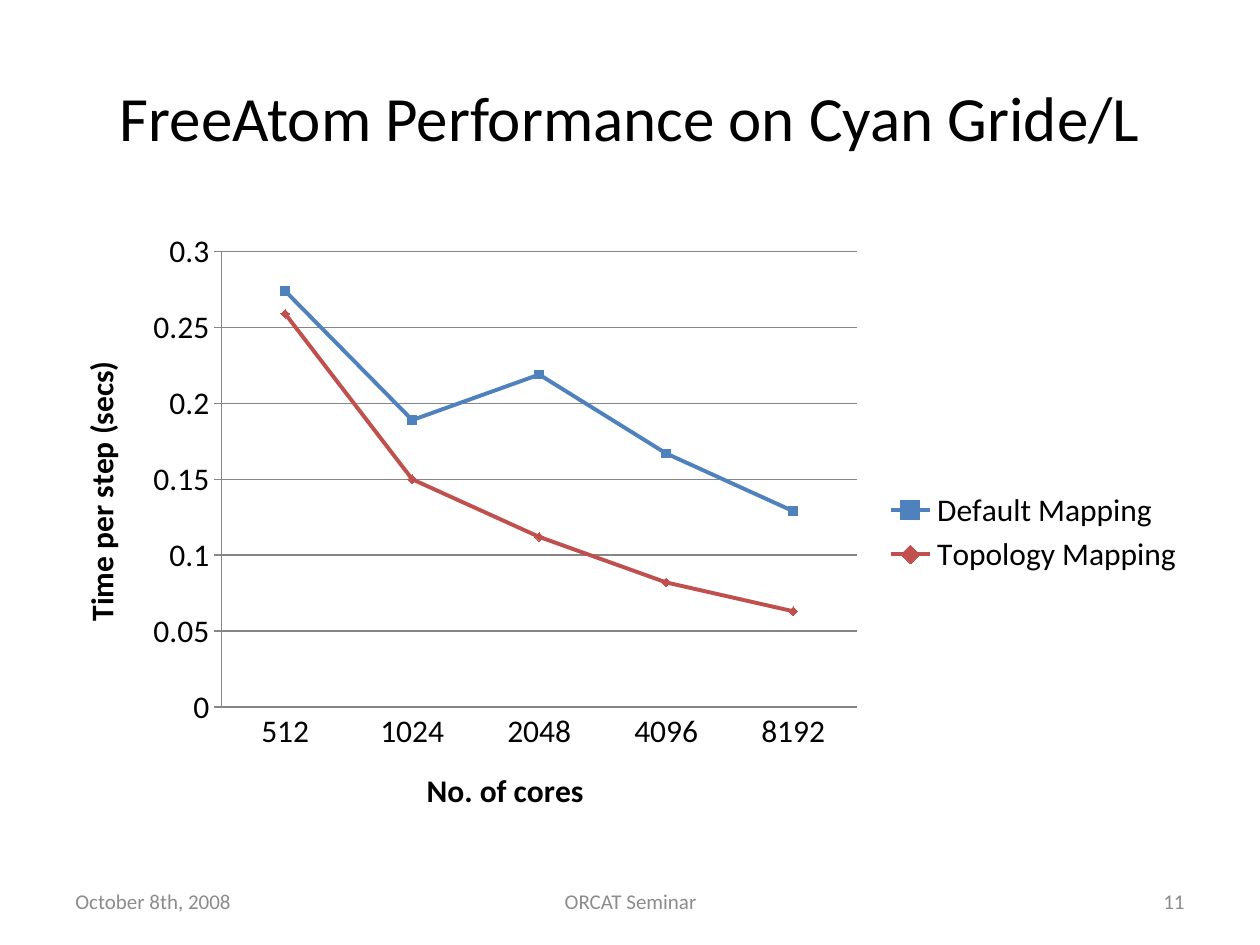
import dataclasses

import lxml.etree
import pptx
import pptx.chart.data
import pptx.dml.color
import pptx.enum.chart
import pptx.enum.text
import pptx.oxml.ns
import pptx.util

Inches = pptx.util.Inches
Pt = pptx.util.Pt
Align = pptx.enum.text.PP_ALIGN
Chart = pptx.enum.chart


@dataclasses.dataclass(frozen=True)
class Theme:
    face: str = "Calibri"
    ink: str = "000000"
    faint: str = "8C8C8C"
    grid: str = "868686"
    blue: str = "4F81BD"
    red: str = "C0504D"
    head: float = 36
    body: float = 18
    foot: float = 12
    hair: float = 0.75
    line: float = 2.25
    mark: int = 5


THEME = Theme()


def tint(code):
    return pptx.dml.color.RGBColor.from_string(code)


def apply(item, form):
    for name, value in form.items():
        setattr(item, name, value)


def style(font, size, color, bold=False):
    apply(font, {"name": THEME.face, "size": Pt(size), "bold": bold})
    font.color.rgb = tint(color)


def paint(line, color, width):
    line.color.rgb = tint(color)
    line.width = Pt(width)


def add_text(slide, box, text, size, color, align):
    frame = slide.shapes.add_textbox(*map(Inches, box)).text_frame
    apply(frame, {"word_wrap": True, "vertical_anchor": pptx.enum.text.MSO_ANCHOR.MIDDLE})
    par = frame.paragraphs[0]
    par.alignment = align
    run = par.add_run()
    run.text = text
    style(run.font, size, color)


def set_axis(axis, title, form):
    apply(axis, form)
    paint(axis.format.line, THEME.grid, THEME.hair)
    style(axis.tick_labels.font, THEME.body, THEME.ink)
    run = axis.axis_title.text_frame.paragraphs[0].add_run()
    run.text = title
    style(run.font, THEME.body, THEME.ink, True)


def set_plot(chart, places):
    area = chart.plots[0]._element.getparent()
    tag = pptx.oxml.ns.qn
    for old in area.findall(tag("c:layout")):
        area.remove(old)
    layout = lxml.etree.Element(tag("c:layout"))
    area.insert(0, layout)
    manual = lxml.etree.SubElement(layout, tag("c:manualLayout"))
    modes = {"layoutTarget": "inner", "xMode": "edge", "yMode": "edge"}
    for name, value in {**modes, **places}.items():
        lxml.etree.SubElement(manual, tag("c:" + name)).set("val", str(value))


def add_lines(slide, box, cats, rows):
    data = pptx.chart.data.CategoryChartData()
    data.categories = cats
    for name, values, *_ in rows:
        data.add_series(name, values)
    kind = Chart.XL_CHART_TYPE.LINE_MARKERS
    chart = slide.shapes.add_chart(kind, *map(Inches, box), data).chart
    style(chart.font, THEME.body, THEME.ink)
    apply(chart, {"has_title": False, "has_legend": True})
    apply(chart.legend, {"position": Chart.XL_LEGEND_POSITION.RIGHT,
                         "include_in_layout": False})
    style(chart.legend.font, THEME.body, THEME.ink)
    tick = Chart.XL_TICK_MARK
    set_axis(chart.category_axis, "No. of cores",
             {"major_tick_mark": tick.NONE, "minor_tick_mark": tick.NONE})
    axis = chart.value_axis
    set_axis(axis, "Time per step (secs)",
             {"major_tick_mark": tick.CROSS, "minor_tick_mark": tick.NONE,
              "has_major_gridlines": True, "minimum_scale": 0,
              "maximum_scale": 0.3, "major_unit": 0.05})
    paint(axis.major_gridlines.format.line, THEME.grid, THEME.hair)
    plot = chart.plots[0]
    plot.vary_by_categories = False
    for line, (_, _, color, mark) in zip(plot.series, rows):
        line.smooth = False
        paint(line.format.line, color, THEME.line)
        apply(line.marker, {"style": mark, "size": THEME.mark})
        line.marker.format.fill.solid()
        line.marker.format.fill.fore_color.rgb = tint(color)
        paint(line.marker.format.line, color, THEME.hair)
    set_plot(chart, {"x": 0.14, "y": 0.05, "w": 0.56, "h": 0.73})


def main():
    deck = pptx.Presentation()
    apply(deck, {"slide_width": Inches(10), "slide_height": Inches(7.5)})
    slide = deck.slides.add_slide(deck.slide_layouts[6])
    add_text(slide, (0.5, 0.3, 9, 1.25), "FreeAtom Performance on Cyan Gride/L",
             THEME.head, THEME.ink, Align.CENTER)
    mark = Chart.XL_MARKER_STYLE
    add_lines(slide, (0.5, 1.75, 9, 4.95), ["512", "1024", "2048", "4096", "8192"], [
        ("Default Mapping", (0.274, 0.189, 0.219, 0.167, 0.129), THEME.blue, mark.SQUARE),
        ("Topology Mapping", (0.259, 0.15, 0.112, 0.082, 0.063), THEME.red, mark.DIAMOND),
    ])
    for left, width, text, align in (
        (0.5, 2.33, "October 8th, 2008", Align.LEFT),
        (7.17, 2.33, "11", Align.RIGHT),
        (3.42, 3.17, "ORCAT Seminar", Align.CENTER),
    ):
        add_text(slide, (left, 6.95, width, 0.4), text, THEME.foot, THEME.faint, align)
    deck.save("out.pptx")


if __name__ == "__main__":
    main()
